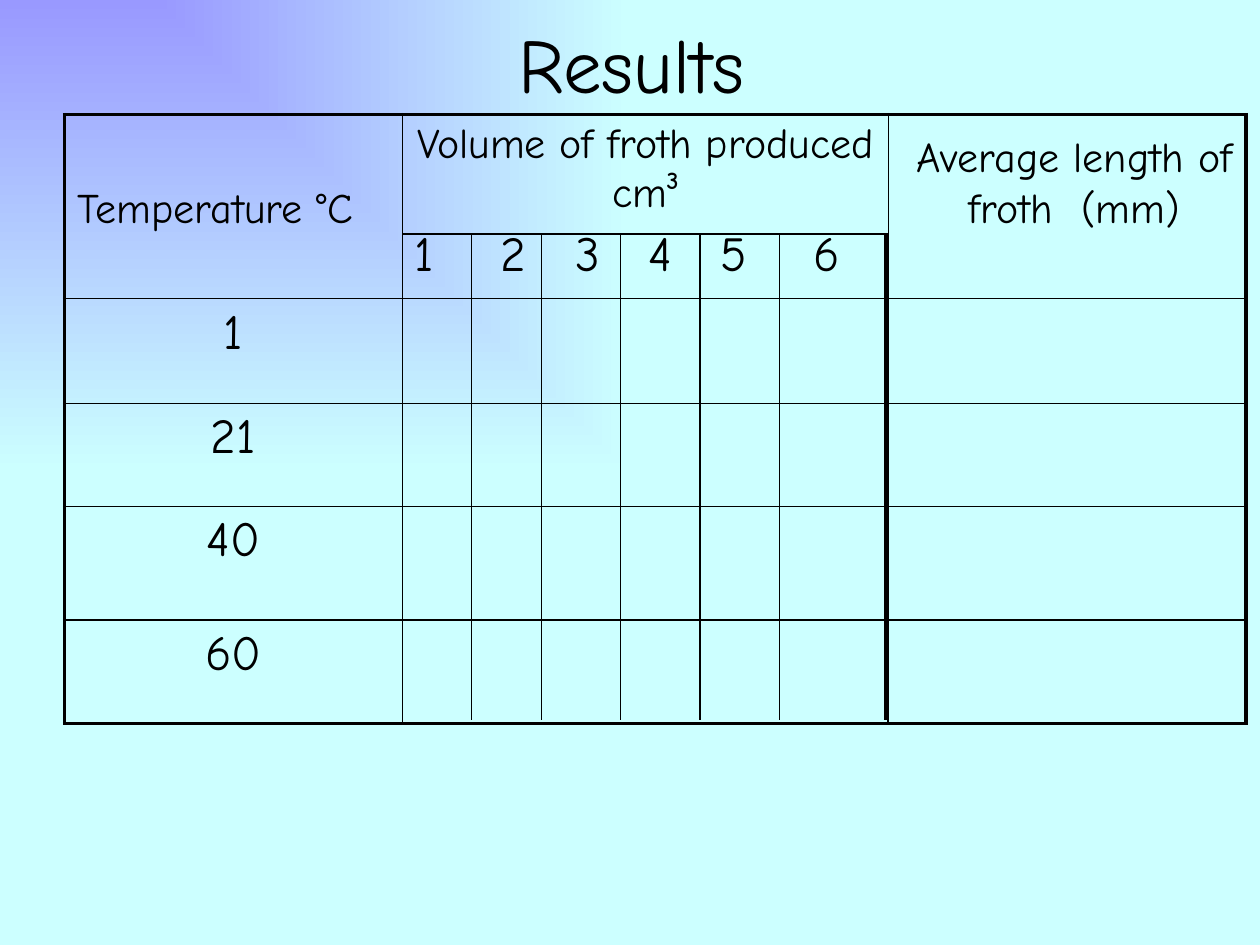
from itertools import accumulate

from lxml.etree import SubElement
from pptx import Presentation
from pptx.dml.color import RGBColor
from pptx.enum.shapes import MSO_CONNECTOR
from pptx.enum.text import MSO_ANCHOR, PP_ALIGN
from pptx.oxml.ns import qn
from pptx.util import Cm, Pt

FONT = "Comic Neue"
BLACK = "000000"
COLS = [6.81, 9.8, 7.21]
ROWS = [3.71, 2.11, 2.08, 2.29, 2.08]
TEMPERATURES = ["1", "21", "40", "60"]
TRIAL_WIDTHS = [1.4, 1.4, 1.6, 1.6, 1.6, 2.13]
TRIAL_TABS = [1.73, 3.23, 4.7, 6.17, 8.03]
HEADER_SPLIT = 2.41
TRIAL_HEIGHT = 9.8


def rgb(value):
    return RGBColor.from_string(value)


def style(p, size, align=PP_ALIGN.LEFT):
    p.alignment = align
    p.font.size = Pt(size)
    p.font.name = FONT
    p.font.color.rgb = rgb(BLACK)


def add_text(slide, box, text, size, anchor):
    s = slide.shapes.add_textbox(*map(Cm, box))
    tf = s.text_frame
    tf.word_wrap = True
    tf.vertical_anchor = anchor
    p = tf.paragraphs[0]
    p.text = text
    style(p, size, PP_ALIGN.CENTER)


def add_line(slide, x1, y1, x2, y2):
    s = slide.shapes.add_connector(MSO_CONNECTOR.STRAIGHT, Cm(x1), Cm(y1), Cm(x2), Cm(y2))
    s.line.color.rgb = rgb(BLACK)
    s.line.width = Pt(0.75)
    SubElement(s.element.spPr, qn("a:effectLst"))


def set_borders(cell, widths):
    tcPr = cell._tc.get_or_add_tcPr()
    for side, width in zip("LRTB", widths):
        ln = SubElement(tcPr, qn(f"a:ln{side}"), w=str(Pt(width)))
        fill = SubElement(ln, qn("a:solidFill"))
        SubElement(fill, qn("a:srgbClr"), val=BLACK)


def add_tabs(p, stops):
    tabs = SubElement(p._p.get_or_add_pPr(), qn("a:tabLst"))
    for stop in stops:
        SubElement(tabs, qn("a:tab"), pos=str(Cm(stop)), algn="l")


def set_background(slide):
    fill = slide.background.fill
    fill.gradient()
    for stop, color in zip(fill.gradient_stops, ["9999FF", "CCFFFF"]):
        stop.color.rgb = rgb(color)
    grad = next(slide.element.iter(qn("a:gradFill")))
    for lin in grad.findall(qn("a:lin")):
        grad.remove(lin)
    shade = SubElement(grad, qn("a:path"))
    shade.set("path", "rect")
    SubElement(shade, qn("a:fillToRect"), r="100000", b="100000")


def add_results_table(slide, left, top):
    s = slide.shapes.add_table(len(ROWS), len(COLS), Cm(left), Cm(top), Cm(sum(COLS)), Cm(sum(ROWS)))
    table = s.table
    table.first_row = table.horz_banding = False
    for column, width in zip(table.columns, COLS):
        column.width = Cm(width)
    for row, height in zip(table.rows, ROWS):
        row.height = Cm(height)
    for i in range(len(ROWS)):
        for j in range(len(COLS)):
            outer = [j == 0, j == len(COLS) - 1, i == 0, i == len(ROWS) - 1]
            cell = table.cell(i, j)
            set_borders(cell, [2.25 if edge else 1 for edge in outer])
            cell.fill.background()

    cell = table.cell(0, 0)
    cell.text = "Temperature °C"
    cell.margin_top = Cm(1.43)
    style(cell.text_frame.paragraphs[0], 24)

    tf = table.cell(0, 1).text_frame
    tf.text = "Volume of froth produced cm³"
    style(tf.paragraphs[0], 24, PP_ALIGN.CENTER)
    p = tf.add_paragraph()
    p.text = "\t".join("123456")
    style(p, 28)
    p.space_before = Pt(5.6)
    add_tabs(p, TRIAL_TABS)

    for i, temperature in enumerate(TEMPERATURES, 1):
        cell = table.cell(i, 0)
        cell.text = temperature
        style(cell.text_frame.paragraphs[0], 28, PP_ALIGN.CENTER)


def add_trial_lines(slide, left, top):
    add_line(slide, left, top, left + COLS[1], top)
    edges = list(accumulate(TRIAL_WIDTHS))
    last = edges[-1]
    for x in edges + [last + 0.03, last + 0.06]:
        add_line(slide, left + x, top, left + x, top + TRIAL_HEIGHT)
    x = left + last + 0.06
    add_line(slide, x, top + 0.08, x, top + 0.08 + TRIAL_HEIGHT)


def add_results(slide, left, top):
    add_results_table(slide, left, top)
    add_trial_lines(slide, left + COLS[0], top + HEADER_SPLIT)
    add_text(slide, (left + 16.61, top + 0.2, 7.49, 2.31),
             "Average length of froth  (mm)", 24, MSO_ANCHOR.TOP)


def main():
    prs = Presentation()
    prs.slide_width, prs.slide_height = Cm(25.4), Cm(19.05)
    slide = prs.slides.add_slide(prs.slide_layouts[6])
    set_background(slide)
    add_text(slide, (1.3, 0, 22.86, 2.54), "Results", 44, MSO_ANCHOR.MIDDLE)
    add_results(slide, 1.3, 2.31)
    prs.save("out.pptx")


if __name__ == "__main__":
    main()
